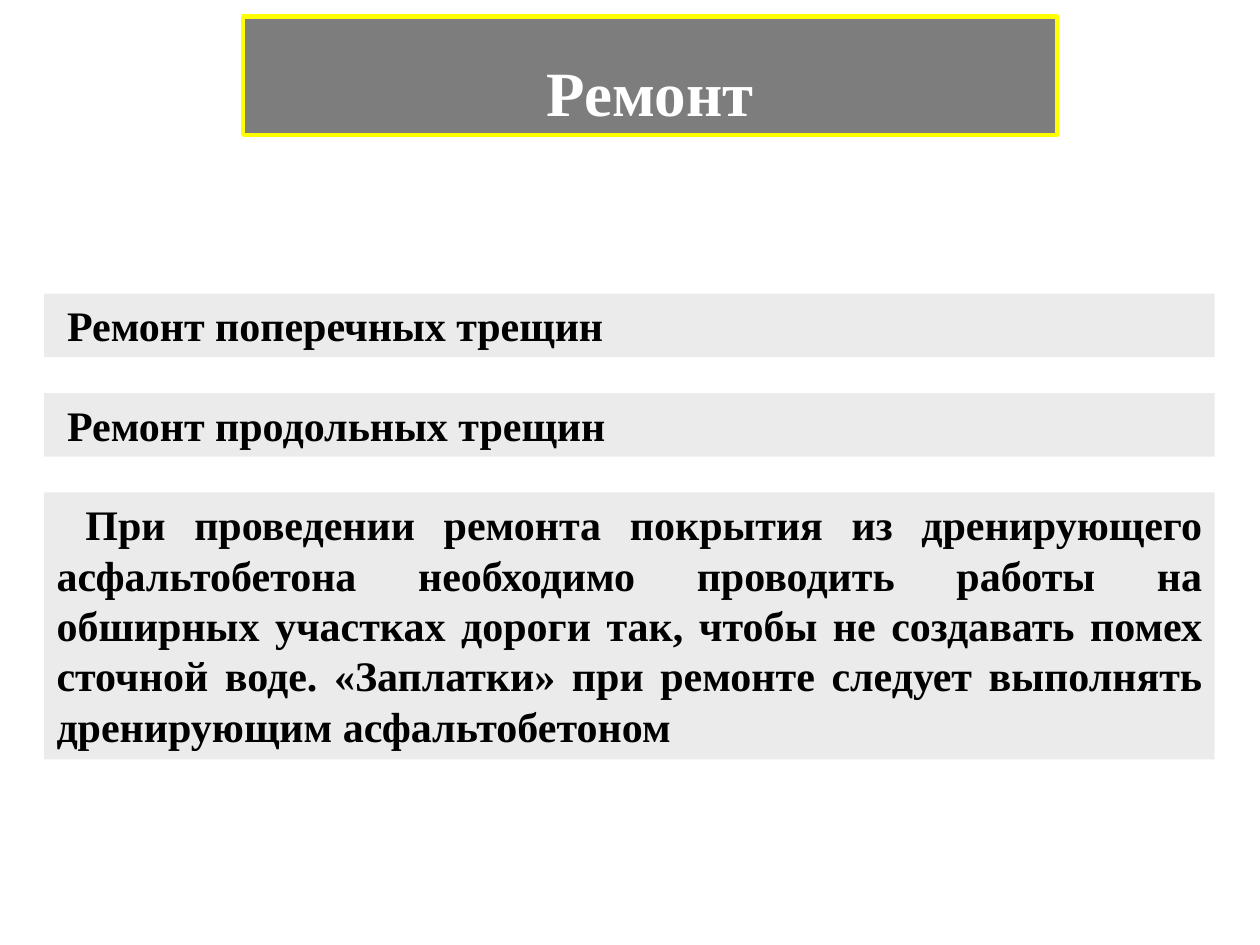
import lxml.etree
import pptx
import pptx.util
from pptx.dml.color import RGBColor
from pptx.enum.shapes import MSO_SHAPE
from pptx.enum.text import MSO_ANCHOR, PP_ALIGN
from pptx.oxml.ns import qn

Pt = pptx.util.Pt

COLORS = {"title_fill": "000000", "title_line": "FFFF00", "title_text": "FFFFFF",
          "band_fill": "D9D9D9", "band_text": "000000"}
FONT = {"name": "Times New Roman", "bold": True}

TITLE = "Ремонт"
# text, height, first-line indent
BANDS = [
    ("Ремонт поперечных трещин", 36.3, 6),
    ("Ремонт продольных трещин", 36.3, 6),
    ("При проведении ремонта покрытия из дренирующего асфальтобетона "
     "необходимо проводить работы на обширных участках дороги так, чтобы "
     "не создавать помех сточной воде. «Заплатки» при ремонте следует "
     "выполнять дренирующим асфальтобетоном", 152.6, 16.5),
]
BAND_LEFT, BAND_TOP, BAND_WIDTH, BAND_GAP = 25.2, 167.8, 668.9, 20.5


def color(name):
    return RGBColor.from_string(COLORS[name])


def add_text_box(slide, text, bounds, role, opacity, size, alignment, anchor):
    """Add a translucent rectangle with one paragraph of bold text."""
    shape = slide.shapes.add_shape(MSO_SHAPE.RECTANGLE, *map(Pt, bounds))
    shape.shadow.inherit = False
    shape.line.fill.background()
    shape.fill.solid()
    shape.fill.fore_color.rgb = color(f"{role}_fill")
    fill_color = shape.fill._xPr.find(qn("a:solidFill"))[0]
    lxml.etree.SubElement(fill_color, qn("a:alpha"), val=str(opacity * 1000))

    frame = shape.text_frame
    frame.word_wrap = True
    frame.vertical_anchor = anchor
    paragraph = frame.paragraphs[0]
    paragraph.text = text
    paragraph.alignment = alignment
    font = paragraph.runs[0].font
    for attribute, value in {**FONT, "size": Pt(size)}.items():
        setattr(font, attribute, value)
    font.color.rgb = color(f"{role}_text")
    return shape


def main():
    presentation = pptx.Presentation()
    presentation.slide_width, presentation.slide_height = Pt(720), Pt(540)
    slide = presentation.slides.add_slide(presentation.slide_layouts[6])

    title = add_text_box(slide, TITLE, (139, 9.4, 465.1, 67.7), "title", 51, 36,
                         PP_ALIGN.CENTER, MSO_ANCHOR.BOTTOM)
    title.line.color.rgb = color("title_line")
    title.line.width = Pt(2.5)

    top = BAND_TOP
    for text, height, indent in BANDS:
        band = add_text_box(slide, text, (BAND_LEFT, top, BAND_WIDTH, height), "band",
                            50, 24, PP_ALIGN.JUSTIFY, MSO_ANCHOR.TOP)
        properties = band.text_frame.paragraphs[0]._p.get_or_add_pPr()
        properties.set("indent", str(int(Pt(indent))))
        top += height + BAND_GAP

    presentation.save("out.pptx")


if __name__ == "__main__":
    main()
